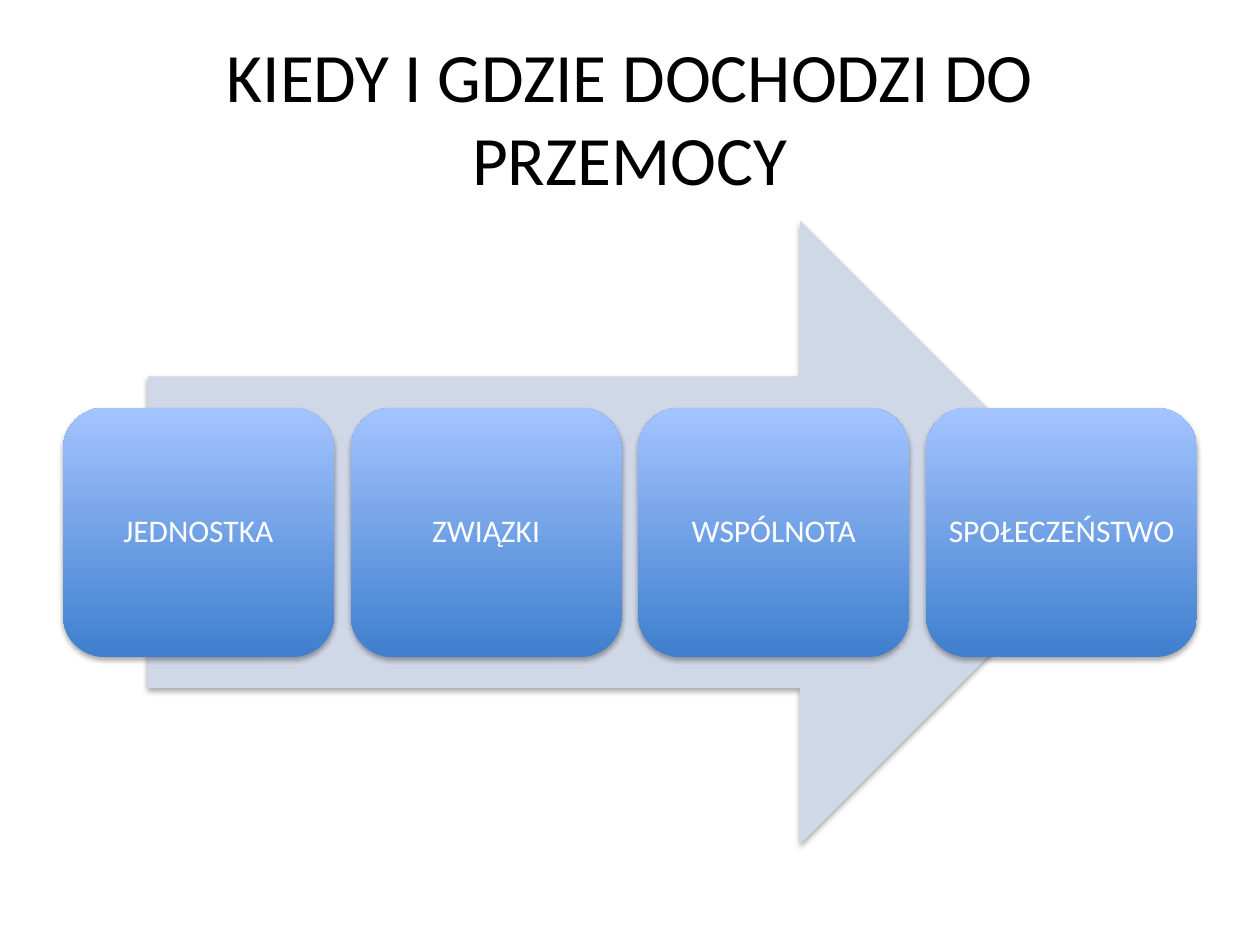
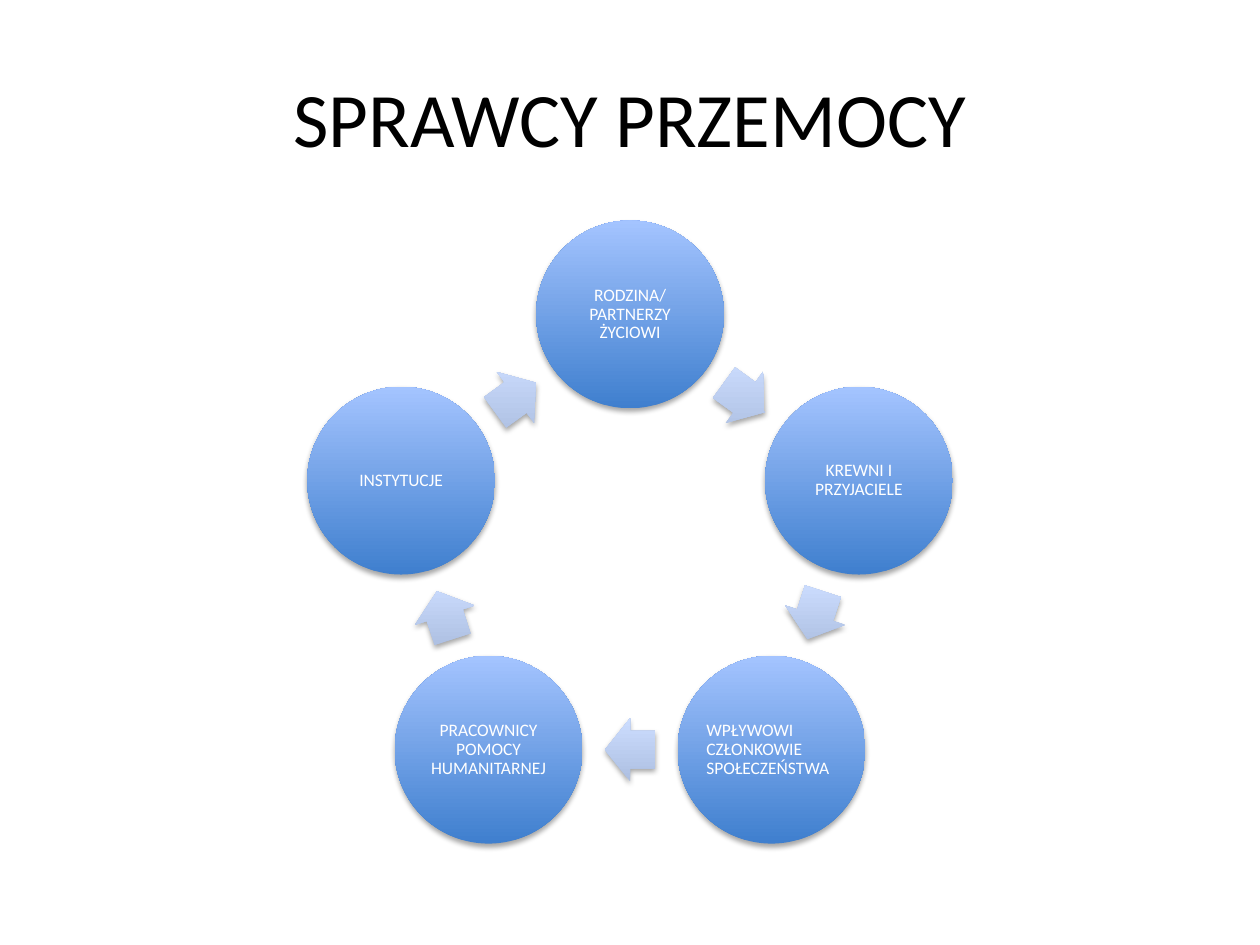
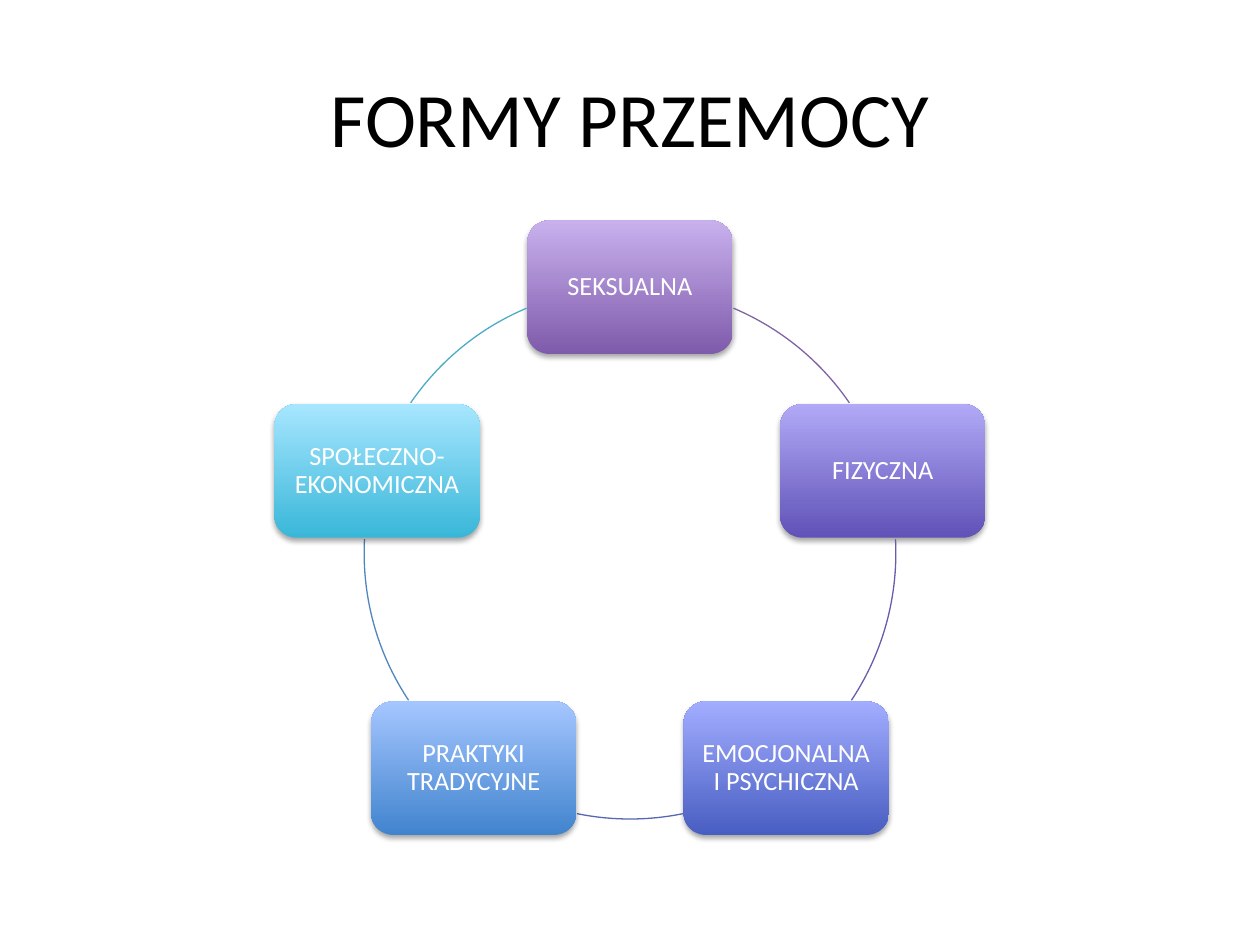
from math import cos, radians, sin

from lxml.etree import SubElement
from pptx import Presentation
from pptx.dml.color import RGBColor
from pptx.enum.shapes import MSO_SHAPE as SHAPE
from pptx.enum.text import MSO_ANCHOR as ANCHOR, MSO_AUTO_SIZE as AUTO, PP_ALIGN as ALIGN
from pptx.oxml.ns import qn
from pptx.util import Inches, Pt

FONT = "Calibri"
WHITE, BLACK = "FFFFFF", "000000"
BAND = "D0D8E8"
BLUE = ("3F7FCE", "A4C4FF")
PALE_BLUE = ("ADBFE1", "CCDDFF")
TITLE_BOX = (0.5, 0.3, 9, 1.25)
BODY_BOX = (0.5, 1.75, 9, 4.95)

STAGES = ["JEDNOSTKA", "ZWIĄZKI", "WSPÓLNOTA", "SPOŁECZEŃSTWO"]
PERPETRATORS = [
    ("RODZINA/PARTNERZY ŻYCIOWI", ALIGN.CENTER),
    ("KREWNI I PRZYJACIELE", ALIGN.CENTER),
    ("WPŁYWOWI CZŁONKOWIE SPOŁECZEŃSTWA", ALIGN.LEFT),
    ("PRACOWNICY POMOCY HUMANITARNEJ", ALIGN.CENTER),
    ("INSTYTUCJE", ALIGN.CENTER),
]
FORMS = [
    ("SEKSUALNA", ("7F5BAB", "C8B0ED"), "8064A2", (292.9, 325.6)),
    ("FIZYCZNA", ("6052B7", "B1A9F6"), "685DAB", (357, 33.6)),
    ("EMOCJONALNA I PSYCHICZNA", ("495EC2", "A2ADFF"), "5767B4", (78.5, 101.5)),
    ("PRAKTYKI TRADYCYJNE", ("4184CE", "A5C6FF"), "5185BD", (146.4, 183)),
    ("SPOŁECZNO-EKONOMICZNA", ("39B7D8", "A7E6FF"), "4BACC6", (214.4, 247.1)),
]


def rgb(value):
    """Turn a hex string into a colour."""
    return RGBColor.from_string(value)


def style_text(p, size, color, align):
    """Format one paragraph."""
    p.font.name, p.font.size = FONT, Pt(size)
    p.font.color.rgb = rgb(color)
    p.alignment = align


def add_title(prs, text, size=44):
    """Add a title-only slide and set its title."""
    slide = prs.slides.add_slide(prs.slide_layouts[5])
    title = slide.shapes.title
    title.left, title.top, title.width, title.height = map(Inches, TITLE_BOX)
    tf = title.text_frame
    tf.text = text
    tf.auto_size, tf.vertical_anchor = AUTO.NONE, ANCHOR.MIDDLE
    style_text(tf.paragraphs[0], size, BLACK, ALIGN.CENTER)
    return slide


def add_shadow(sp):
    """Give a shape the soft shadow below it."""
    sp.shadow.inherit = False
    effects = sp.element.spPr.find(qn("a:effectLst"))
    shadow = SubElement(effects, qn("a:outerShdw"), blurRad=str(Pt(3.1)), dist=str(Pt(1.8)),
                        dir="5400000", rotWithShape="0")
    color = SubElement(shadow, qn("a:srgbClr"), val=BLACK)
    SubElement(color, qn("a:alpha"), val="35000")


def add_block(slide, kind, box, fill):
    """Add a borderless shape with a plain colour or a (bottom, top) gradient."""
    sp = slide.shapes.add_shape(kind, *map(Inches, box))
    if isinstance(fill, str):
        sp.fill.solid()
        sp.fill.fore_color.rgb = rgb(fill)
    else:
        sp.fill.gradient()
        sp.fill.gradient_angle = 90
        for stop, color in zip(sp.fill.gradient_stops, fill):
            stop.color.rgb = rgb(color)
        sp.element.spPr.find(qn("a:gradFill")).set("rotWithShape", "0")
    sp.line.fill.background()
    add_shadow(sp)
    return sp


def write(sp, text, size, inset, align=ALIGN.CENTER):
    """Write a label inside a shape."""
    tf = sp.text_frame
    tf.text = text
    tf.word_wrap, tf.vertical_anchor = True, ANCHOR.MIDDLE
    tf.margin_left = tf.margin_right = tf.margin_top = tf.margin_bottom = Inches(inset)
    p = tf.paragraphs[0]
    p.line_spacing = 0.9
    style_text(p, size, WHITE, align)


def around(center, radius, angle, w, h):
    """Return a box centred on a circle, the angle running clockwise from the top."""
    x, y = center
    a = radians(angle)
    return x + radius * sin(a) - w / 2, y - radius * cos(a) - h / 2, w, h


def draw_process(slide, box):
    """Draw the stages in a row over a wide arrow."""
    x, y, w, h = box
    add_block(slide, SHAPE.RIGHT_ARROW, (x + 0.075 * w, y, 0.85 * w, h), BAND)
    card_w, card_h = 2.15, 0.4 * h
    step = (w - card_w) / (len(STAGES) - 1)
    for i, stage in enumerate(STAGES):
        card = (x + i * step, y + (h - card_h) / 2, card_w, card_h)
        write(add_block(slide, SHAPE.ROUNDED_RECTANGLE, card, BLUE), stage, 18, 0.07)


def draw_cycle(slide, box):
    """Draw the circles in a ring with an arrow between neighbours."""
    x, y, w, h = box
    size, radius = 1.49, 1.91
    center = (x + w / 2, y + size / 2 + radius)
    step = 360 / len(PERPETRATORS)
    for i, (text, align) in enumerate(PERPETRATORS):
        circle = around(center, radius, i * step, size, size)
        write(add_block(slide, SHAPE.OVAL, circle, BLUE), text, 10, 0.01, align)
        angle = (i + 0.5) * step
        place = around(center, radius * cos(radians(step / 2)), angle, 0.4, 0.5)
        arrow = add_block(slide, SHAPE.RIGHT_ARROW, place, PALE_BLUE)
        arrow.adjustments[0], arrow.adjustments[1] = 0.6, 0.5
        arrow.rotation = angle


def draw_ring(slide, box):
    """Draw the cards in a ring joined by arcs."""
    x, y, w, h = box
    card_w, card_h, radius = 1.63, 1.06, 2.11
    center = (x + w / 2, y + card_h / 2 + radius)
    step = 360 / len(FORMS)
    for i, (text, fill, line, ends) in enumerate(FORMS):
        card = around(center, radius, i * step, card_w, card_h)
        write(add_block(slide, SHAPE.ROUNDED_RECTANGLE, card, fill), text, 15, 0.06)
        ring = around(center, 0, 0, 2 * radius, 2 * radius)
        arc = slide.shapes.add_shape(SHAPE.ARC, *map(Inches, ring))
        for j, angle in enumerate(ends):
            arc.adjustments[j] = angle * 0.6
        arc.fill.background()
        arc.line.color.rgb, arc.line.width = rgb(line), Pt(0.75)
        arc.shadow.inherit = False


def main():
    """Build and save the slides."""
    prs = Presentation()
    prs.slide_width, prs.slide_height = Inches(10), Inches(7.5)
    draw_process(add_title(prs, "KIEDY I GDZIE DOCHODZI DO PRZEMOCY", 39.6), BODY_BOX)
    draw_cycle(add_title(prs, "SPRAWCY PRZEMOCY"), BODY_BOX)
    draw_ring(add_title(prs, "FORMY PRZEMOCY"), BODY_BOX)
    prs.save("out.pptx")


if __name__ == "__main__":
    main()
